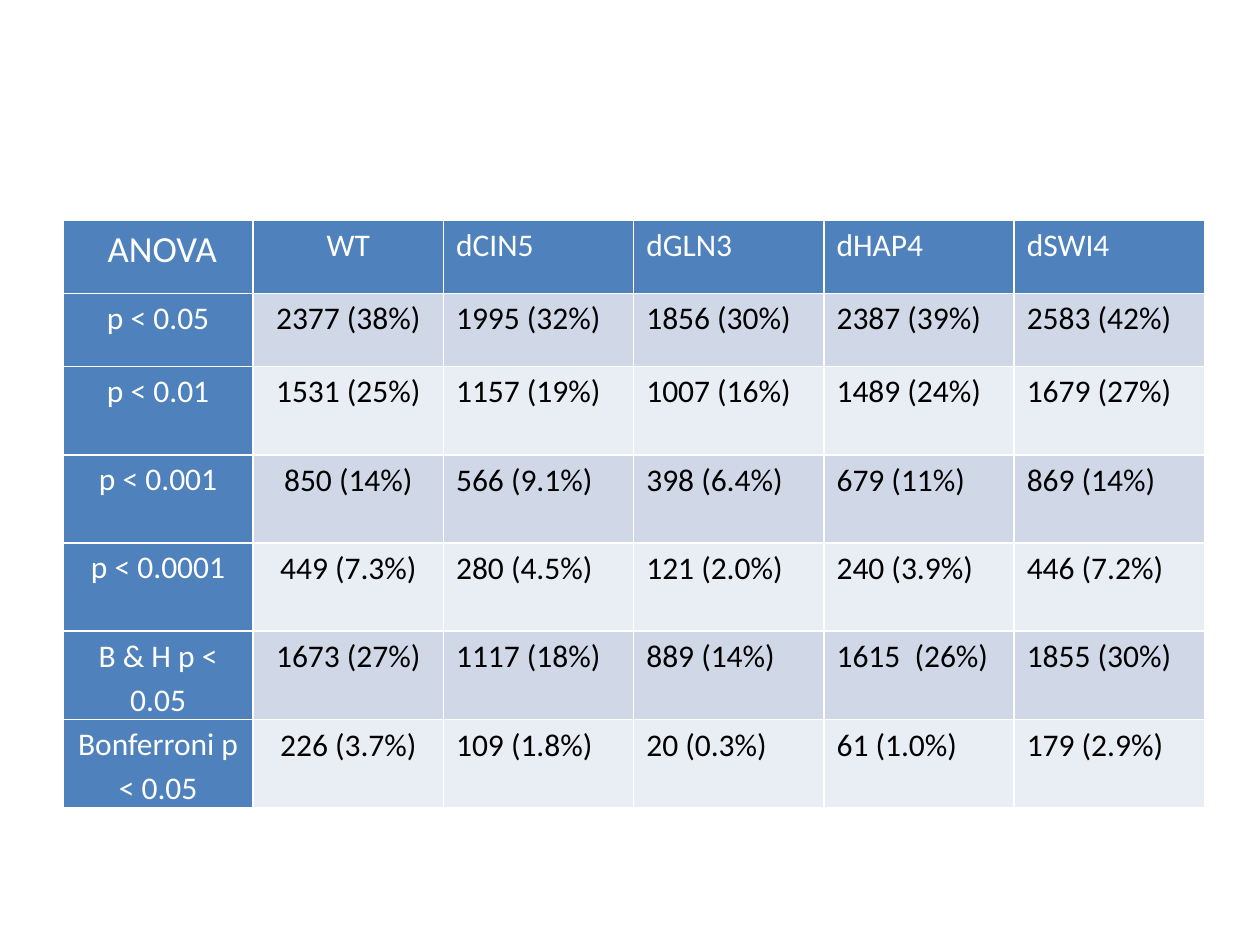
from dataclasses import dataclass

from pptx import Presentation
from pptx.dml.color import RGBColor
from pptx.enum.text import PP_ALIGN
from pptx.util import Inches, Pt

CENTER, LEFT = PP_ALIGN.CENTER, PP_ALIGN.LEFT

WHITE = RGBColor(0xFF, 0xFF, 0xFF)
BLACK = RGBColor(0x00, 0x00, 0x00)
HEADER_BLUE = RGBColor(0x4F, 0x81, 0xBD)
BANDS = (RGBColor(0xD0, 0xD8, 0xE8), RGBColor(0xE9, 0xED, 0xF4))

COLUMN_WIDTH = 1.51
ROW_HEIGHTS = [0.58] * 2 + [0.7] * 5

ROWS = [
    (" ANOVA", "WT", "dCIN5", "dGLN3", "dHAP4", "dSWI4"),
    ("p < 0.05", "2377 (38%)", "1995 (32%)", "1856 (30%)", "2387 (39%)", "2583 (42%)"),
    ("p < 0.01", "1531 (25%)", "1157 (19%)", "1007 (16%)", "1489 (24%)", "1679 (27%)"),
    ("p < 0.001", "850 (14%)", "566 (9.1%)", "398 (6.4%)", "679 (11%)", "869 (14%)"),
    ("p < 0.0001", "449 (7.3%)", "280 (4.5%)", "121 (2.0%)", "240 (3.9%)", "446 (7.2%)"),
    ("B & H p < 0.05", "1673 (27%)", "1117 (18%)", "889 (14%)", "1615  (26%)", "1855 (30%)"),
    ("Bonferroni p < 0.05", "226 (3.7%)", "109 (1.8%)", "20 (0.3%)", "61 (1.0%)", "179 (2.9%)"),
]

# Label cells are set tighter and with looser lines than value cells
LABEL_MARGINS = {
    "margin_left": Inches(0.07),
    "margin_right": Inches(0.07),
    "margin_top": 0,
    "margin_bottom": 0,
}


@dataclass
class CellStyle:
    fill: RGBColor
    color: RGBColor
    size: int
    centered: bool
    is_label: bool


def style_for(row: int, column: int) -> CellStyle:
    """Choose the look of a cell from its place in the table."""
    heading = row == 0 or column == 0
    return CellStyle(
        fill=HEADER_BLUE if heading else BANDS[(row - 1) % 2],
        color=WHITE if heading else BLACK,
        size=21 if row == column == 0 else 18,
        centered=column < 2,
        is_label=column == 0 or (row == 0 and column == 1),
    )


def set_attributes(target: object, values: dict) -> None:
    for name, value in values.items():
        setattr(target, name, value)


def fill_cell(cell, text: str, style: CellStyle) -> None:
    cell.fill.solid()
    cell.fill.fore_color.rgb = style.fill
    paragraph = cell.text_frame.paragraphs[0]
    paragraph.alignment = CENTER if style.centered else LEFT
    if style.is_label:
        set_attributes(cell, LABEL_MARGINS)
        paragraph.line_spacing = 1.15
    run = paragraph.add_run()
    run.text = text
    set_attributes(run.font, {"name": "Calibri", "size": Pt(style.size), "bold": False})
    run.font.color.rgb = style.color


def add_anova_table(slide) -> None:
    column_count = len(ROWS[0])
    table = slide.shapes.add_table(
        len(ROWS), column_count, Inches(0.5), Inches(1.75),
        Inches(COLUMN_WIDTH * column_count), Inches(sum(ROW_HEIGHTS)),
    ).table
    table.first_col = True
    for column in table.columns:
        column.width = Inches(COLUMN_WIDTH)
    for row, height in zip(table.rows, ROW_HEIGHTS):
        row.height = Inches(height)
    for row_index, texts in enumerate(ROWS):
        for column_index, text in enumerate(texts):
            cell = table.cell(row_index, column_index)
            fill_cell(cell, text, style_for(row_index, column_index))


def main() -> None:
    presentation = Presentation()
    presentation.slide_width = Inches(10)
    presentation.slide_height = Inches(7.5)
    # The slide has no title, so it uses the blank layout
    slide = presentation.slides.add_slide(presentation.slide_layouts[6])
    add_anova_table(slide)
    presentation.save("out.pptx")


if __name__ == "__main__":
    main()
